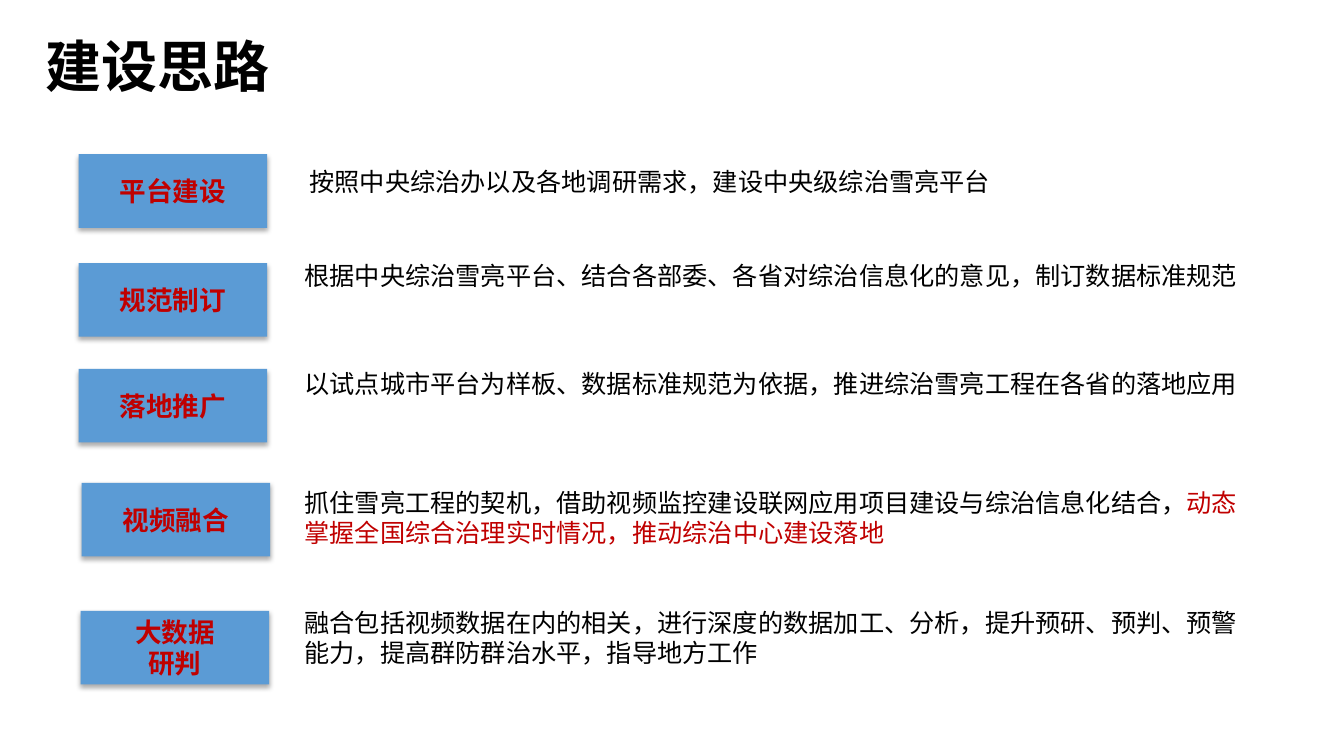
from lxml import etree
from pptx import Presentation
from pptx.dml.color import RGBColor
from pptx.enum.shapes import MSO_SHAPE
from pptx.enum.text import MSO_ANCHOR, PP_ALIGN
from pptx.oxml.ns import qn
from pptx.util import Inches, Pt

ROUNDED = MSO_SHAPE.ROUNDED_RECTANGLE
TOP, MIDDLE = MSO_ANCHOR.TOP, MSO_ANCHOR.MIDDLE
LEFT, CENTER = PP_ALIGN.LEFT, PP_ALIGN.CENTER

BLACK = RGBColor(0x00, 0x00, 0x00)
RED = RGBColor(0xC0, 0x00, 0x00)
BLUE = RGBColor(0x5B, 0x9B, 0xD5)
FONT = "Noto Sans CJK SC"
LINE_RATIO = 1.19  # line pitch relative to the text size
LABEL_WIDTH, LABEL_HEIGHT = 1.87, 0.73

# Label, label position, description runs, description box
STEPS = [
    ("平台建设", (0.78, 1.53),
     [("按照中央综治办以及各地调研需求，建设中央级综治雪亮平台", BLACK)],
     (2.94, 1.58, 8.79, 0.87)),
    ("规范制订", (0.78, 2.61),
     [("根据中央综治雪亮平台、结合各部委、各省对综治信息化的意见，制订数据标准规范", BLACK)],
     (2.89, 2.52, 10.4, 0.76)),
    ("落地推广", (0.78, 3.66),
     [("以试点城市平台为样板、数据标准规范为依据，推进综治雪亮工程在各省的落地应用", BLACK)],
     (2.89, 3.59, 10.4, 0.76)),
    ("视频融合", (0.81, 4.79),
     [("抓住雪亮工程的契机，借助视频监控建设联网应用项目建设与综治信息化结合，", BLACK),
      ("动态掌握全国综合治理实时情况，推动综治中心建设落地", RED)],
     (2.89, 4.77, 9.52, 1.2)),
    ("大数据\n研判", (0.8, 6.06),
     [("融合包括视频数据在内的相关，进行深度的数据加工、分析，提升预研、预判、预警"
       "能力，提高群防群治水平，指导地方工作", BLACK)],
     (2.89, 5.96, 9.74, 1.29)),
]


def write_text(shape, runs, size, bold=False, align=LEFT, anchor=TOP, inset=(0.1, 0.05)):
    frame = shape.text_frame
    frame.word_wrap = True
    frame.vertical_anchor = anchor
    frame.margin_left = frame.margin_right = Inches(inset[0])
    frame.margin_top = frame.margin_bottom = Inches(inset[1])
    paragraph = frame.paragraphs[0]
    paragraph.alignment = align
    paragraph.space_before = Pt(0)
    paragraph.line_spacing = Pt(round(size * LINE_RATIO, 1))
    for text, color in runs:
        for index, line in enumerate(text.split("\n")):
            if index:
                paragraph.add_line_break()
            run = paragraph.add_run()
            run.text = line
            run.font.size = Pt(size)
            run.font.bold = bold
            run.font.name = FONT
            run.font.color.rgb = color
            east_asian = etree.SubElement(run.font._element, qn("a:ea"))
            east_asian.set("typeface", FONT)


def add_soft_shadow(shape):
    shape.shadow.inherit = False
    effects = shape._element.spPr.find(qn("a:effectLst"))
    shadow = etree.SubElement(effects, qn("a:outerShdw"), blurRad=str(Pt(3.5)),
                              dist=str(Pt(2.2)), dir="5400000", rotWithShape="0")
    color = etree.SubElement(shadow, qn("a:srgbClr"), val="000000")
    etree.SubElement(color, qn("a:alpha"), val="32000")


def add_title(slide, text, box):
    title = slide.shapes.add_textbox(*map(Inches, box))
    write_text(title, [(text, BLACK)], 40, bold=True)


def add_label(slide, text, box):
    label = slide.shapes.add_shape(ROUNDED, *map(Inches, box))
    label.adjustments[0] = 0
    label.fill.solid()
    label.fill.fore_color.rgb = BLUE
    label.line.fill.background()
    add_soft_shadow(label)
    write_text(label, [(text, RED)], 19, bold=True, align=CENTER, anchor=MIDDLE)


def add_description(slide, runs, box):
    description = slide.shapes.add_textbox(*map(Inches, box))
    write_text(description, runs, 18, inset=(0.13, 0.07))


def main():
    presentation = Presentation()
    presentation.slide_width = Inches(13.33)
    presentation.slide_height = Inches(7.5)
    slide = presentation.slides.add_slide(presentation.slide_layouts[6])

    add_title(slide, "建设思路", (0.35, 0.27, 10.72, 0.76))
    for label, position, description, box in STEPS:
        add_label(slide, label, (*position, LABEL_WIDTH, LABEL_HEIGHT))
        add_description(slide, description, box)

    presentation.save("out.pptx")


if __name__ == "__main__":
    main()
